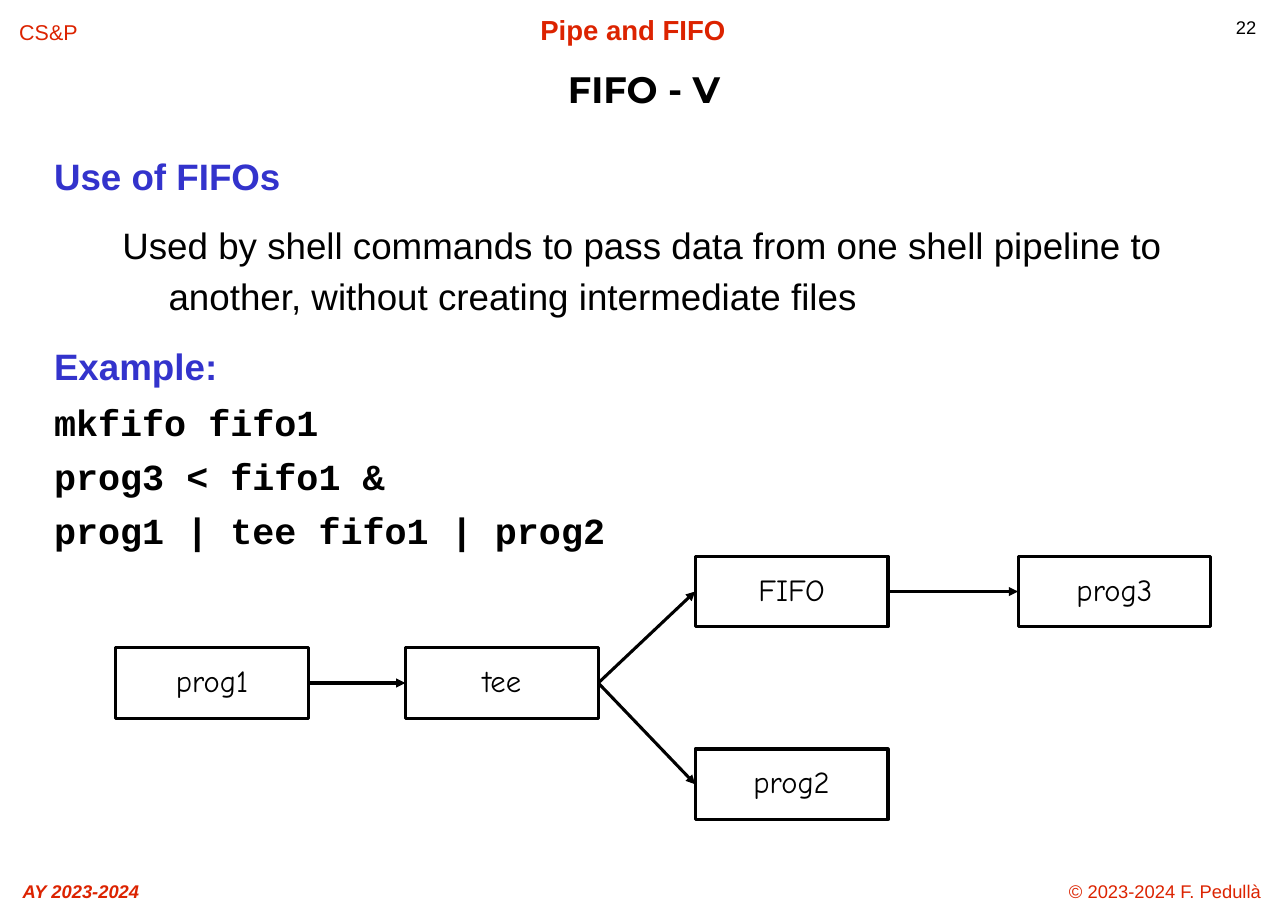
from lxml.etree import SubElement
from pptx import Presentation
from pptx.dml.color import RGBColor
from pptx.enum.shapes import MSO_CONNECTOR as LINK, MSO_SHAPE as SHAPE
from pptx.enum.text import MSO_ANCHOR as ANCHOR, MSO_AUTO_SIZE as FIT, PP_ALIGN as ALIGN
from pptx.oxml.ns import qn
from pptx.util import Inches, Pt

BLACK, RED, BLUE = "000000", "DC2300", "3333CC"
color = RGBColor.from_string


def write(frame, text, size=24, font="Arial", hue=BLACK, bold=False,
          italic=False, align=ALIGN.LEFT, line=1.01, before=0, left=0, hang=0):
    """Add one paragraph to the frame, filling its empty first one if there is one."""
    frame.word_wrap = True
    frame.auto_size = FIT.NONE
    para = frame.paragraphs[0]
    if para.runs:
        para = frame.add_paragraph()
    props = para._p.get_or_add_pPr()
    props.set("marL", str(Inches(left)))
    props.set("indent", str(Inches(-hang)))
    SubElement(props, qn("a:buNone"))
    para.alignment = align
    para.line_spacing = line
    para.space_before = Pt(before)
    run = para.add_run()
    run.text = text
    face = run.font
    face.name, face.size, face.bold, face.italic = font, Pt(size), bold, italic
    face.color.rgb = color(hue)


deck = Presentation()
deck.slide_width, deck.slide_height = Inches(11.69), Inches(8.27)
slide = deck.slides.add_slide(deck.slide_layouts[1])
shapes = slide.shapes

# Header and footer
mid = ALIGN.CENTER
for text, x, y, w, style in [
    ("22", 11.12, 0.1, 0.57, dict(size=12)),
    ("© 2023-2024 F. Pedullà", 9.46, 7.94, 2.23, dict(size=12, hue=RED, align=mid)),
    ("AY 2023-2024", 0, 7.94, 1.47,
     dict(size=12, hue=RED, bold=True, italic=True, align=mid)),
    ("Pipe and FIFO", 4.15, 0.07, 3.19, dict(size=18, hue=RED, bold=True, align=mid)),
    ("CS&P", 0, 0.12, 0.88, dict(size=14, hue=RED, align=mid)),
]:
    box = shapes.add_textbox(Inches(x), Inches(y), Inches(w), Inches(0.33))
    write(box.text_frame, text, **style)

# Title and body
title, body = shapes.title, slide.placeholders[1]
title.left, title.top = Inches(0.27), Inches(0.52)
title.width, title.height = Inches(11.15), Inches(0.63)
title.text_frame.vertical_anchor = ANCHOR.MIDDLE
write(title.text_frame, "FIFO - V", font="Montserrat", bold=True, align=mid, line=0.85)

body.left, body.top = Inches(0.39), Inches(1.38)
body.width, body.height = Inches(10.91), Inches(4.39)
frame = body.text_frame
frame.vertical_anchor = ANCHOR.TOP
head = dict(hue=BLUE, bold=True, line=Pt(26.2), left=0.41, hang=0.41)
write(frame, "Use of FIFOs", **head)
write(frame, "Used by shell commands to pass data from one shell pipeline to another, "
      "without creating intermediate files", line=1.18, before=11, left=1.04, hang=0.42)
write(frame, "Example:", before=19.2, **head)
for code in ["mkfifo fifo1", "prog3 < fifo1 &", "prog1 | tee fifo1 | prog2"]:
    write(frame, code, font="Courier New", bold=True, line=0.56, before=19.2,
          left=0.42, hang=0.42)

# Pipeline diagram
nodes = {}
for name, x, y in [("prog1", 1.05, 5.88), ("tee", 3.68, 5.88), ("FIFO", 6.31, 5.05),
                   ("prog2", 6.31, 6.8), ("prog3", 9.24, 5.05)]:
    node = shapes.add_shape(SHAPE.RECTANGLE, Inches(x), Inches(y), Inches(1.75), Inches(0.64))
    node.shadow.inherit = False
    node.fill.background()
    node.line.color.rgb = color(BLACK)
    node.line.width = Pt(2)
    node.text_frame.vertical_anchor = ANCHOR.MIDDLE
    write(node.text_frame, name, size=20, font="Comic Neue", align=mid, line=0.86)
    nodes[name] = node

for start, end in [("prog1", "tee"), ("tee", "FIFO"), ("tee", "prog2"), ("FIFO", "prog3")]:
    arrow = shapes.add_connector(LINK.STRAIGHT, 0, 0, 0, 0)
    arrow.begin_connect(nodes[start], 3)
    arrow.end_connect(nodes[end], 1)
    arrow.line.color.rgb = color(BLACK)
    arrow.line.width = Pt(2)
    SubElement(arrow.line._get_or_add_ln(), qn("a:tailEnd"), type="triangle")
    SubElement(arrow._element.spPr, qn("a:effectLst"))

deck.save("out.pptx")
